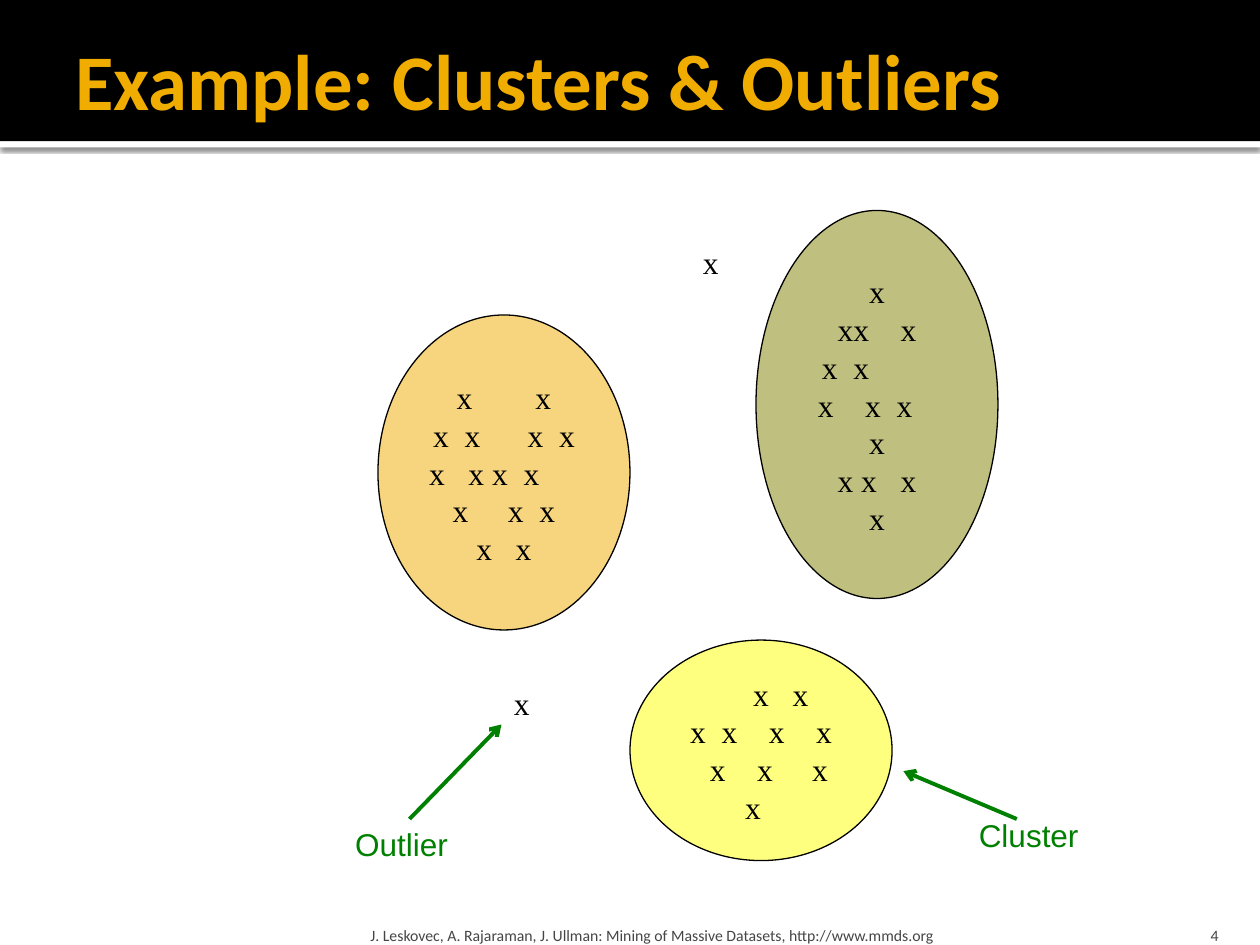
from pptx import Presentation
from pptx.dml.color import RGBColor
from pptx.enum.shapes import MSO_CONNECTOR, MSO_SHAPE
from pptx.enum.text import MSO_ANCHOR, PP_ALIGN
from pptx.oxml import parse_xml
from pptx.oxml.ns import nsdecls, qn
from pptx.util import Inches, Pt
from lxml.etree import SubElement

WIDTH, HEIGHT = 10, 7.5
BLACK = RGBColor(0x00, 0x00, 0x00)
WHITE = RGBColor(0xFF, 0xFF, 0xFF)
GOLD = RGBColor(0xF0, 0xAD, 0x00)
OLIVE = RGBColor(0x80, 0x80, 0x00)
YELLOW = RGBColor(0xFF, 0xFF, 0x00)
GREEN = RGBColor(0x00, 0x80, 0x00)
GRAY = RGBColor(0x45, 0x45, 0x45)

POINT_FONT = "Times New Roman"
HALF_POINT = 4.5       # half the width of an 18 pt "x", and a whole space
ELLIPSE_TEXT = 0.7071  # share of an ellipse that its text area takes
NEAR_GAPS = {2: "", 3: " "}  # points this close share one tab stop

# Clusters: box, colour, and per row the left edges of the points,
# in half points from the centre of the ellipse
CLUSTERS = [
    ((3, 2.5, 2, 2.5), GOLD,
     [(-6, 4), (-9, -5, 3, 7), (-9.5, -4.5, -1.5, 2.5),
      (-6.5, 0.5, 4.5), (-3.5, 1.5)]),
    ((6, 1.67, 1.92, 3.08), OLIVE,
     [(-1,), (-5, -3, 3), (-7, -3), (-7.5, -1.5, 2.5),
      (-1,), (-5, -2, 3), (-1,)]),
    ((5, 5.08, 2.08, 1.75), YELLOW,
     [(-1, 4), (-9, -5, 1, 7), (-6.5, -0.5, 6.5), (-2,)]),
]
OUTLIERS = [(5.48, 1.88), (3.98, 5.38)]


def inches(box):
    return [Inches(length) for length in box]


def set_font(paragraph, name, size, color):
    font = paragraph.font
    font.name, font.size, font.color.rgb = name, Pt(size), color


def set_insets(frame, left, top, right, bottom):
    frame.margin_left, frame.margin_top = Inches(left), Inches(top)
    frame.margin_right, frame.margin_bottom = Inches(right), Inches(bottom)


def add_band(slide, top, height, color):
    band = slide.shapes.add_shape(
        MSO_SHAPE.RECTANGLE, *inches((0, top, WIDTH, height)))
    band.shadow.inherit = False
    band.fill.solid()
    band.fill.fore_color.rgb = color
    band.line.fill.background()
    return band


def add_header(slide, text):
    # White strip with a soft shadow under the black band
    strip = add_band(slide, 1.12, 0.05, WHITE)
    strip._element.spPr.find(qn("a:effectLst")).append(parse_xml(
        f'<a:outerShdw {nsdecls("a")} blurRad="{Pt(2.5)}" dist="{Pt(0.8)}" '
        'dir="5400000" rotWithShape="0"><a:srgbClr val="000000">'
        '<a:alpha val="60000"/></a:srgbClr></a:outerShdw>'))
    add_band(slide, 0, 1.12, BLACK)

    title = slide.shapes.title
    title.left, title.top, title.width, title.height = inches(
        (0.5, 0.17, 9, 0.92))
    frame = title.text_frame
    frame.text = text
    frame.vertical_anchor = MSO_ANCHOR.MIDDLE
    set_insets(frame, 0.1, 0.05, 0.05, 0.05)
    heading = frame.paragraphs[0]
    heading.alignment = PP_ALIGN.LEFT
    set_font(heading, "Calibri", 45, GOLD)
    heading.font.bold = True
    slide.shapes._spTree.append(title._element)  # in front of the bands


def add_point_row(paragraph, offsets, center):
    """Place points at tab stops, near neighbours behind the same stop."""
    tabs = SubElement(paragraph._p.get_or_add_pPr(), qn("a:tabLst"))
    row, previous = "", None
    for offset in offsets:
        gap = None if previous is None else offset - previous
        if gap not in NEAR_GAPS:
            stop = Pt(center + offset * HALF_POINT)
            SubElement(tabs, qn("a:tab"), pos=str(int(stop)), algn="l")
        row += NEAR_GAPS.get(gap, "\t") + "x"
        previous = offset
    paragraph.add_run().text = row
    paragraph.alignment = PP_ALIGN.LEFT
    set_font(paragraph, POINT_FONT, 18, BLACK)


def add_cluster(slide, box, color, rows):
    cluster = slide.shapes.add_shape(MSO_SHAPE.OVAL, *inches(box))
    cluster.shadow.inherit = False
    cluster.fill.solid()
    cluster.fill.fore_color.rgb = color
    shade = cluster._element.spPr.find(qn("a:solidFill"))[0]
    SubElement(shade, qn("a:alpha"), val="50000")
    cluster.line.color.rgb = BLACK
    cluster.line.width = Pt(0.75)

    frame = cluster.text_frame
    frame.word_wrap = True
    frame.vertical_anchor = MSO_ANCHOR.MIDDLE
    set_insets(frame, 0, 0, 0, 0)
    center = cluster.width.pt * ELLIPSE_TEXT / 2
    for index, offsets in enumerate(rows):
        paragraph = frame.add_paragraph() if index else frame.paragraphs[0]
        add_point_row(paragraph, offsets, center)


def add_label(slide, box, text, font, size, color):
    label = slide.shapes.add_textbox(*inches(box))
    frame = label.text_frame
    frame.text = text
    frame.word_wrap = False
    set_font(frame.paragraphs[0], font, size, color)
    return frame


def add_footer(slide, box, text, side_inset, alignment):
    frame = add_label(slide, box, text, "Calibri", 9, GRAY)
    frame.word_wrap = True
    frame.vertical_anchor = MSO_ANCHOR.BOTTOM
    set_insets(frame, side_inset, 0.05, side_inset, 0)
    frame.paragraphs[0].alignment = alignment


def add_arrow(slide, start, end):
    arrow = slide.shapes.add_connector(
        MSO_CONNECTOR.STRAIGHT, *inches(start + end))
    arrow.line.color.rgb = GREEN
    arrow.line.width = Pt(2.25)
    SubElement(arrow.line._get_or_add_ln(), qn("a:tailEnd"), type="arrow")
    SubElement(arrow._element.spPr, qn("a:effectLst"))


def main():
    deck = Presentation()
    deck.slide_width, deck.slide_height = Inches(WIDTH), Inches(HEIGHT)
    slide = deck.slides.add_slide(deck.slide_layouts.get_by_name("Title Only"))
    add_header(slide, "Example: Clusters & Outliers")

    # Data points
    for box, color, rows in CLUSTERS:
        add_cluster(slide, box, color, rows)
    for left, top in OUTLIERS:
        add_label(slide, (left, top, 0.37, 0.5), "x", POINT_FONT, 18, BLACK)

    # Callouts
    add_arrow(slide, (3.25, 6.5), (3.98, 5.75))
    add_label(slide, (2.72, 6.5, 0.95, 0.4), "Outlier", "Arial", 18, GREEN)
    add_arrow(slide, (8.07, 6.5), (7.17, 6.12))
    add_label(slide, (7.67, 6.43, 1, 0.4), "Cluster", "Arial", 18, GREEN)

    # Footer
    add_footer(slide, (2.89, 7.2, 6.02, 0.3),
               "J. Leskovec, A. Rajaraman, J. Ullman: Mining of Massive "
               "Datasets, http://www.mmds.org", 0.05, PP_ALIGN.LEFT)
    add_footer(slide, (8.97, 7.2, 0.8, 0.3), "4", 0.1, PP_ALIGN.RIGHT)

    deck.save("out.pptx")


if __name__ == "__main__":
    main()
